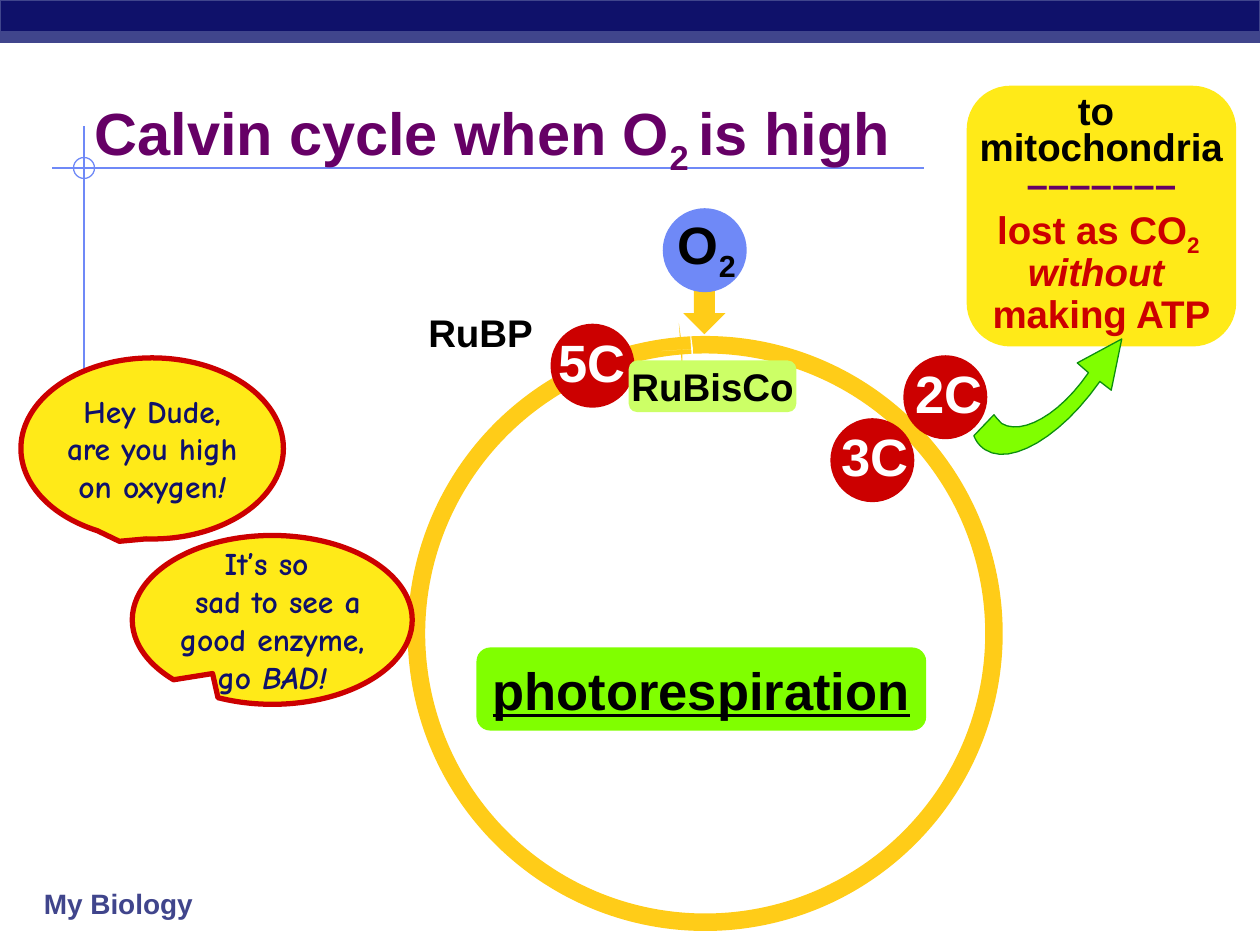
from lxml.etree import SubElement
from pptx import Presentation
from pptx.dml.color import RGBColor
from pptx.enum.shapes import MSO_CONNECTOR, MSO_SHAPE as Kind
from pptx.enum.text import MSO_ANCHOR, MSO_AUTO_SIZE, PP_ALIGN as Align
from pptx.oxml.ns import qn
from pptx.util import Pt

THEME = dict(
    navy="0F116A", slate="40458C", blue="6F89F7", gold="FFCC18", yellow="FFEA18",
    red="CC0000", purple="660066", lime="80FF00", pale="CCFF66", green="0C8F0F",
    white="FFFFFF", black="000000",
    sans="Arial", comic="Comic Neue",
    title=34, big=30, label=22, speech=18, footer=16,
)

# Content: a paragraph is a list of runs, a run is (text, format changes)
SUB, ITALIC = dict(sub=True), dict(italic=True)
TITLE = [[("Calvin cycle when O", {}), ("2 ", SUB), ("is high", {})]]
FOOTER = [[("My Biology", {})]]
OXYGEN = [[("O", {}), ("2", SUB)]]
RUBP = [[("RuBP", {})]]
ENZYME = [[("RuBisCo", {})]]
PROCESS = [[("photorespiration", {})]]
RED = dict(color="red")
FATE = [
    [("to \nmitochondria", {})],
    [("–––––––", dict(color="purple"))],
    [("lost as CO", RED), ("2 \n", RED | SUB), ("without \n", RED | ITALIC),
     ("making ATP", RED)],
]
FATE_SPACING = (0.8, 0.8, 0.9)
# Carbon molecules: text, circle left, top, label left
CARBONS = [("5C", 314.6, 185, 311.8), ("3C", 474.5, 239, 473.8), ("2C", 516.2, 203, 516.2)]
# Speech bubbles: box, tail position, paragraphs
BUBBLES = {
    "high": ((12, 204.5, 150, 103.5), (-0.125, 0.513),
             [[("Hey Dude,", {})], [("are you high\non oxygen", {}), ("!", ITALIC)]]),
    "bad": ((75.6, 306, 160, 96.5), (-0.213, 0.318),
            [[("It’s so \n sad to see a\ngood enzyme,\ngo ", {}), ("BAD!", ITALIC)]]),
}
# Curved arrow outline: two points make a line, six a Bezier curve
ARROW_START = (622, 213)
ARROW = [
    (605.5, 237, 584, 249, 572.4, 242), (571, 240.5, 569.5, 239, 568, 237),
    (556.5, 249), (558, 252.7, 560, 255, 563, 257), (577.5, 266.4, 606, 250, 628.5, 218),
    (635, 223), (641, 193.7), (615.6, 207.4), ARROW_START,
]
CIRCLE = 48
INSET = (7.2, 3.6)


def rgb(name):
    return RGBColor.from_string(THEME[name])


def paint(shape, fill=None, line=None, weight=0.75):
    shape.shadow.inherit = False
    if fill:
        shape.fill.solid()
        shape.fill.fore_color.rgb = rgb(fill)
    else:
        shape.fill.background()
    if line:
        shape.line.color.rgb = rgb(line)
        shape.line.width = Pt(weight)
    else:
        shape.line.fill.background()
    return shape


def draw(kind, box, adjust=(), turn=0, **look):
    shape = page.shapes.add_shape(kind, *map(Pt, box))
    for index, value in enumerate(adjust):
        shape.adjustments[index] = value
    shape.rotation = turn
    return paint(shape, **look)


def write(shape, paras, size="label", color="black", font="sans", align=Align.CENTER,
          inset=INSET, wrap=False, underline=None, spacing=()):
    frame = shape.text_frame
    frame.auto_size = MSO_AUTO_SIZE.NONE
    frame.word_wrap = wrap
    frame.vertical_anchor = MSO_ANCHOR.MIDDLE
    frame.margin_left = frame.margin_right = Pt(inset[0])
    frame.margin_top = frame.margin_bottom = Pt(inset[1])
    for index, runs in enumerate(paras):
        para = frame.add_paragraph() if index else frame.paragraphs[0]
        para.alignment = align
        if spacing:
            para.line_spacing = spacing[index]
        for text, change in runs:
            for row, piece in enumerate(text.split("\n")):
                if row:
                    para.add_line_break()
                if not piece:
                    continue
                span = para.add_run()
                span.text = piece
                span.font.name = THEME[font]
                span.font.size = Pt(THEME[size])
                span.font.bold = True
                span.font.italic = change.get("italic")
                span.font.underline = underline
                span.font.color.rgb = rgb(change.get("color", color))
                if change.get("sub"):
                    span._r.get_or_add_rPr().set("baseline", "-25000")


def label(box, paras, **look):
    write(page.shapes.add_textbox(*map(Pt, box)), paras, **look)


def rule(*ends):
    line = page.shapes.add_connector(MSO_CONNECTOR.STRAIGHT, *map(Pt, ends))
    line.line.color.rgb = rgb("blue")
    line.line.width = Pt(1)
    SubElement(line.element.spPr, qn("a:effectLst"))


def outline(start, segments, steps=12):
    points = [start]
    for segment in segments:
        if len(segment) == 2:
            points.append(segment)
            continue
        corners = [points[-1], segment[:2], segment[2:4], segment[4:]]
        for step in range(1, steps + 1):
            t = step / steps
            weights = ((1 - t) ** 3, 3 * t * (1 - t) ** 2, 3 * t * t * (1 - t), t ** 3)
            points.append(tuple(sum(w * c[axis] for w, c in zip(weights, corners))
                                for axis in (0, 1)))
    return points


deck = Presentation()
deck.slide_width, deck.slide_height = Pt(720), Pt(540)
page = deck.slides.add_slide(deck.slide_layouts[5])

# Frame: crossing rules, top bands, footer
rule(30, 96, 528, 96)
rule(48, 72, 48, 276)
draw(Kind.OVAL, (42, 90, 12, 12), line="blue")
draw(Kind.RECTANGLE, (0, 0, 720, 24), fill="navy", line="slate")
draw(Kind.RECTANGLE, (0, 18, 720, 6), fill="slate", line="slate")
label((18, 502.5, 114, 27), FOOTER, size="footer", color="slate", align=Align.LEFT, wrap=True)

# Cycle ring with the oxygen arrow and the break at its top
draw(Kind.DOWN_ARROW, (390.5, 161, 24, 30), (0.5, 0.5), fill="gold")
draw(Kind.OVAL, (238, 197, 330, 330), line="gold", weight=10)

# Title, brought in front of the rules
title = page.shapes.title
title.left, title.top, title.width, title.height = map(Pt, (47, 54, 482, 48))
write(title, TITLE, size="title", color="purple", align=Align.LEFT, wrap=True)
title.element.getparent().append(title.element)

for left, fill in ((378, "white"), (372, "gold")):
    draw(Kind.RIGHT_ARROW, (left, 185, 18, 30), (0, 0.056), turn=356, fill=fill)

# Carbon molecules
for name, left, top, text_left in CARBONS:
    draw(Kind.OVAL, (left, top, CIRCLE, CIRCLE), fill="red")
    label((text_left, top, 52.6, 43), [[(name, {})]], size="big", color="white")
label((237.6, 172.8, 74, 34), RUBP)

# Fate of the 2C molecule
fate = draw(Kind.ROUNDED_RECTANGLE, (552.4, 49, 154, 149), (0.167,), fill="yellow")
write(fate, FATE, inset=(0, 0), spacing=FATE_SPACING)
points = [(Pt(x), Pt(y)) for x, y in outline(ARROW_START, ARROW)]
builder = page.shapes.build_freeform(*points[0])
builder.add_line_segments(points[1:], close=True)
paint(builder.convert_to_shape(), fill="lime", line="green")

# Process name and oxygen
process = draw(Kind.ROUNDED_RECTANGLE, (272.3, 370, 257, 47.5), (0.167,), fill="lime")
write(process, PROCESS, size="big", underline=True)
draw(Kind.OVAL, (378.7, 119, CIRCLE, CIRCLE), fill="blue")
label((379.4, 120, 49, 43), OXYGEN, size="big")


# Speech bubbles, with the enzyme between them in the stack
def bubble(name):
    box, tail, paras = BUBBLES[name]
    shape = draw(Kind.OVAL_CALLOUT, box, tail, fill="yellow", line="red", weight=3)
    write(shape, paras, size="speech", color="navy", font="comic", inset=(0, 0))


bubble("high")
enzyme = draw(Kind.ROUNDED_RECTANGLE, (359.3, 206, 95.8, 29.5), (0.167,), fill="pale")
write(enzyme, ENZYME, inset=(0, 0))
bubble("bad")

deck.save("out.pptx")
